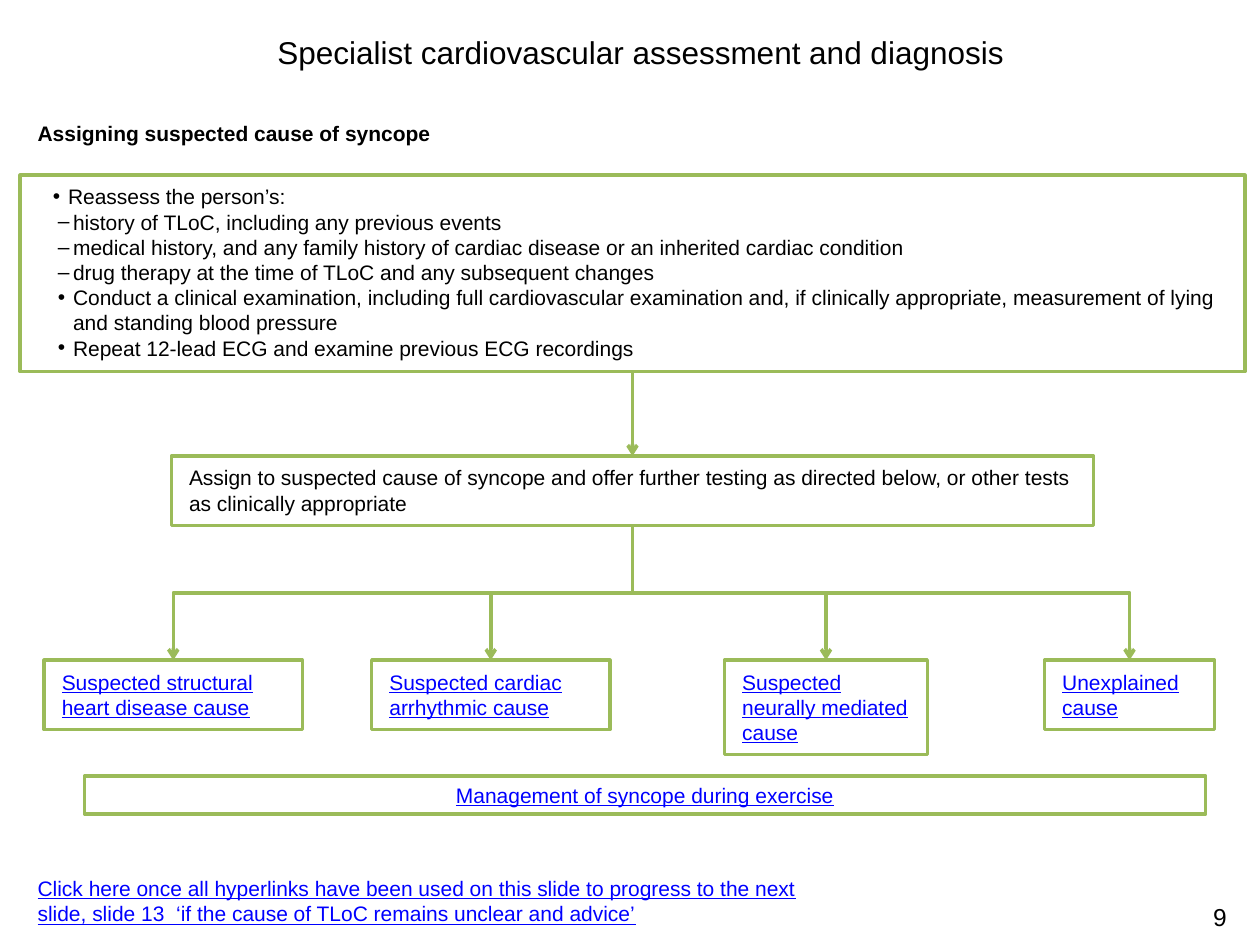
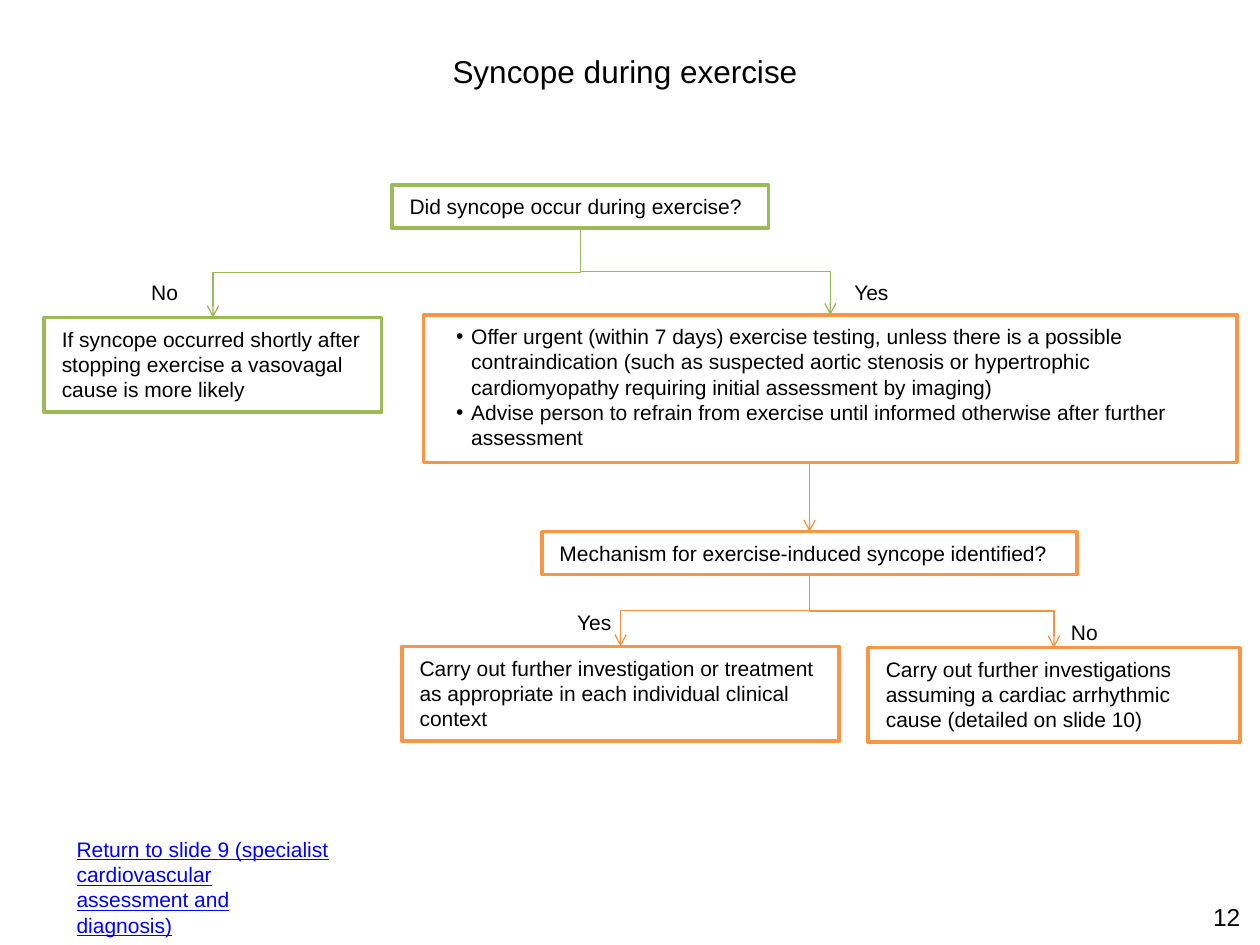
import dataclasses

import pptx
import pptx.dml.color
import pptx.enum.shapes
import pptx.enum.text
import pptx.oxml
import pptx.oxml.ns
import pptx.util

Inches = pptx.util.Inches
Pt = pptx.util.Pt
qn = pptx.oxml.ns.qn
CONNECTOR = pptx.enum.shapes.MSO_CONNECTOR
ALIGN = pptx.enum.text.PP_ALIGN


@dataclasses.dataclass(frozen=True)
class Theme:
    font: str = "Arial"
    text: str = "000000"
    link: str = "0000FF"
    fill: str = "FFFFFF"
    green: str = "9BBB59"
    orange: str = "F79646"
    green_arrow: str = "98B955"
    orange_arrow: str = "F69240"
    title_size: int = 18
    body_size: int = 12
    number_size: int = 14
    box_line: float = 2
    thin_line: float = 0.75


THEME = Theme()
BOX_INSETS = (0.14, 0.07)
TEXT_INSETS = (0.1, 0.05)
HANGING = 0.12


def rgb(value):
    return pptx.dml.color.RGBColor.from_string(value)


def place(sp, at):
    sp.left, sp.top, sp.width, sp.height = (Inches(v) for v in at)


def write(sp, lines, size=THEME.body_size, bold=False, link=False,
          align=ALIGN.LEFT, insets=TEXT_INSETS, wrap=True):
    tf = sp.text_frame
    tf.text = "\n".join(lines)
    tf.word_wrap = wrap
    tf.auto_size = pptx.enum.text.MSO_AUTO_SIZE.NONE
    tf.vertical_anchor = pptx.enum.text.MSO_ANCHOR.TOP
    tf.margin_left = tf.margin_right = Inches(insets[0])
    tf.margin_top = tf.margin_bottom = Inches(insets[1])
    for p in tf.paragraphs:
        p.alignment = align
        for r in p.runs:
            r.font.name = THEME.font
            r.font.size = Pt(size)
            r.font.bold = bold
            r.font.underline = link
            r.font.color.rgb = rgb(THEME.link if link else THEME.text)


def add_text(slide, at, text, **style):
    sp = slide.shapes.add_textbox(*(Inches(v) for v in at))
    write(sp, [text], **style)
    return sp


def add_label(slide, at, text):
    return add_text(slide, at, text, insets=BOX_INSETS, wrap=False)


def add_box(slide, at, lines, color=THEME.green, insets=BOX_INSETS, **style):
    sp = slide.shapes.add_shape(pptx.enum.shapes.MSO_SHAPE.RECTANGLE,
                                *(Inches(v) for v in at))
    sp.shadow.inherit = False
    sp.fill.solid()
    sp.fill.fore_color.rgb = rgb(THEME.fill)
    sp.line.color.rgb = rgb(color)
    sp.line.width = Pt(THEME.box_line)
    write(sp, lines, insets=insets, **style)
    return sp


def add_bullet_box(slide, at, items, color=THEME.green):
    """Items are (bullet, left margin, text) tuples."""
    sp = add_box(slide, at, [text for _, _, text in items], color)
    for p, (bullet, margin, _) in zip(sp.text_frame.paragraphs, items):
        pPr = p._p.get_or_add_pPr()
        pPr.set("marL", str(Inches(margin)))
        pPr.set("indent", str(-Inches(HANGING)))
        pptx.oxml.ns  # namespace table used by qn
        bu_font = pPr.makeelement(qn("a:buFont"), {"typeface": THEME.font})
        bu_char = pPr.makeelement(qn("a:buChar"), {"char": bullet})
        pPr.extend([bu_font, bu_char])
    return sp


def middle(sp):
    return sp.left + sp.width // 2


def style_arrow(cxn, color, width):
    cxn.line.color.rgb = rgb(color)
    cxn.line.width = Pt(width)
    ln = cxn.line._get_or_add_ln()
    ln.append(ln.makeelement(qn("a:tailEnd"), {"type": "arrow"}))
    spPr = cxn._element.spPr
    spPr.append(spPr.makeelement(qn("a:effectLst"), {}))


def add_straight_arrow(slide, source, target, color, width):
    """Drop vertically from the source's lower side to the target's top middle."""
    x = middle(target)
    cxn = slide.shapes.add_connector(CONNECTOR.STRAIGHT, x, source.top + source.height,
                                     x, target.top)
    if abs(middle(source) - x) < Inches(0.01):
        cxn.begin_connect(source, 2)
    cxn.end_connect(target, 0)
    style_arrow(cxn, color, width)


def add_elbow_arrow(slide, source, target, color, width):
    """Go down, across and down: an elbow turned by a quarter."""
    x1, y1 = middle(source), source.top + source.height
    x2, y2 = middle(target), target.top
    cxn = slide.shapes.add_connector(CONNECTOR.ELBOW, x1, y1, x2, y2)
    cxn.begin_connect(source, 2)
    cxn.end_connect(target, 0)
    drop, run = y2 - y1, abs(x2 - x1)
    cxn.left, cxn.top = (x1 + x2 - drop) // 2, (y1 + y2 - run) // 2
    cxn.width, cxn.height = drop, run
    xfrm = cxn._element.spPr.find(qn("a:xfrm"))
    xfrm.attrib.pop("flipH", None)
    if x2 < x1:
        xfrm.set("rot", str(90 * 60000))
    else:
        xfrm.set("rot", str(270 * 60000))
        xfrm.set("flipH", "1")
    style_arrow(cxn, color, width)


def add_slide(prs, title, title_at, number):
    slide = prs.slides.add_slide(prs.slide_layouts[5])
    place(slide.shapes.title, title_at)
    write(slide.shapes.title, [title], size=THEME.title_size, align=ALIGN.CENTER)
    add_text(slide, (9.53, 7.11, 0.43, 0.34), number, size=THEME.number_size)
    return slide


def build_assessment(prs):
    slide = add_slide(prs, "Specialist cardiovascular assessment and diagnosis",
                      (0.83, 0.21, 8.51, 0.4), "9")
    add_text(slide, (0.2, 0.91, 4.65, 0.3), "Assigning suspected cause of syncope", bold=True)
    reassess = add_bullet_box(slide, (0.16, 1.39, 9.72, 1.56), [
        ("•", 0.24, "Reassess the person’s:"),
        ("–", 0.28, "history of TLoC, including any previous events"),
        ("–", 0.28, "medical history, and any family history of cardiac disease "
                    "or an inherited cardiac condition"),
        ("–", 0.28, "drug therapy at the time of TLoC and any subsequent changes"),
        ("•", 0.28, "Conduct a clinical examination, including full cardiovascular "
                    "examination and, if clinically appropriate, measurement of lying "
                    "and standing blood pressure"),
        ("•", 0.28, "Repeat 12-lead ECG and examine previous ECG recordings"),
    ])
    assign = add_box(slide, (1.36, 3.62, 7.32, 0.55), [
        "Assign to suspected cause of syncope and offer further testing as directed "
        "below, or other tests as clinically appropriate"])
    add_straight_arrow(slide, reassess, assign, THEME.green, THEME.box_line)

    causes = [
        (0.35, 2.05, 0.55, "Suspected structural heart disease cause"),
        (2.95, 1.89, 0.55, "Suspected cardiac arrhythmic cause"),
        (5.75, 1.61, 0.75, "Suspected neurally mediated cause"),
        (8.29, 1.35, 0.55, "Unexplained cause"),
    ]
    for left, width, height, text in causes:
        cause = add_box(slide, (left, 5.24, width, height), [text], link=True)
        add_elbow_arrow(slide, assign, cause, THEME.green, THEME.box_line)

    add_box(slide, (0.67, 6.16, 8.9, 0.3), ["Management of syncope during exercise"],
            insets=TEXT_INSETS, link=True, align=ALIGN.CENTER)
    add_text(slide, (0.2, 6.9, 6.3, 0.51),
             "Click here once all hyperlinks have been used on this slide to progress to "
             "the next slide, slide 13  ‘if the cause of TLoC remains unclear and advice’",
             link=True)


def build_exercise(prs):
    slide = add_slide(prs, "Syncope during exercise", (0.59, 0.36, 8.74, 0.4), "12")
    question = add_box(slide, (3.11, 1.47, 2.99, 0.34),
                       ["Did syncope occur during exercise?"])
    vasovagal = add_box(slide, (0.35, 2.52, 2.68, 0.75), [
        "If syncope occurred shortly after stopping exercise a vasovagal cause "
        "is more likely"])
    testing = add_bullet_box(slide, (3.36, 2.5, 6.46, 1.17), [
        ("•", 0.24, "Offer urgent (within 7 days) exercise testing, unless there is a "
                    "possible contraindication (such as suspected aortic stenosis or "
                    "hypertrophic cardiomyopathy requiring initial assessment by imaging)"),
        ("•", 0.24, "Advise person to refrain from exercise until informed otherwise "
                    "after further assessment"),
    ], THEME.orange)
    mechanism = add_box(slide, (4.3, 4.22, 4.25, 0.34), [
        "Mechanism for exercise-induced syncope identified?"], THEME.orange)
    treatment = add_box(slide, (3.19, 5.13, 3.47, 0.75), [
        "Carry out further investigation or treatment as appropriate in each "
        "individual clinical context"], THEME.orange)
    arrhythmic = add_box(slide, (6.89, 5.14, 2.95, 0.75), [
        "Carry out further investigations assuming a cardiac arrhythmic cause "
        "(detailed on slide 10)"], THEME.orange)

    for source, target, color in [
        (question, testing, THEME.green_arrow),
        (question, vasovagal, THEME.green_arrow),
        (mechanism, treatment, THEME.orange_arrow),
        (mechanism, arrhythmic, THEME.orange_arrow),
    ]:
        add_elbow_arrow(slide, source, target, color, THEME.thin_line)
    add_straight_arrow(slide, testing, mechanism, THEME.orange_arrow, THEME.thin_line)

    for left, top, width, answer in [
        (1.06, 2.15, 0.5, "No"),
        (6.64, 2.15, 0.56, "Yes"),
        (4.44, 4.77, 0.56, "Yes"),
        (8.36, 4.85, 0.5, "No"),
    ]:
        add_label(slide, (left, top, width, 0.34), answer)
    add_text(slide, (0.51, 6.59, 2.2, 0.71),
             "Return to slide 9 (specialist cardiovascular assessment and diagnosis)",
             link=True)


def main():
    prs = pptx.Presentation()
    prs.slide_width, prs.slide_height = Inches(10), Inches(7.5)
    build_assessment(prs)
    build_exercise(prs)
    prs.save("out.pptx")


if __name__ == "__main__":
    main()
